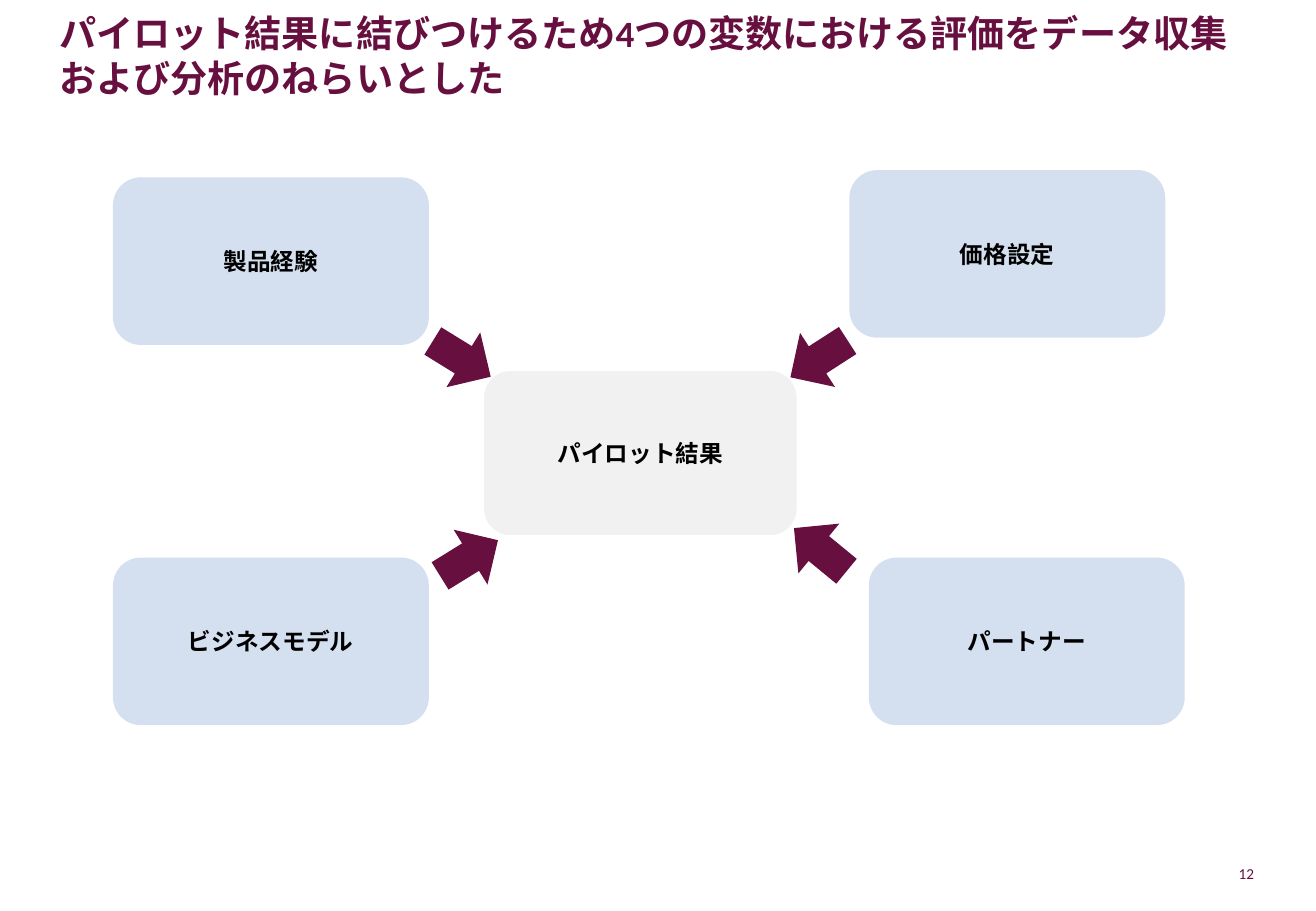
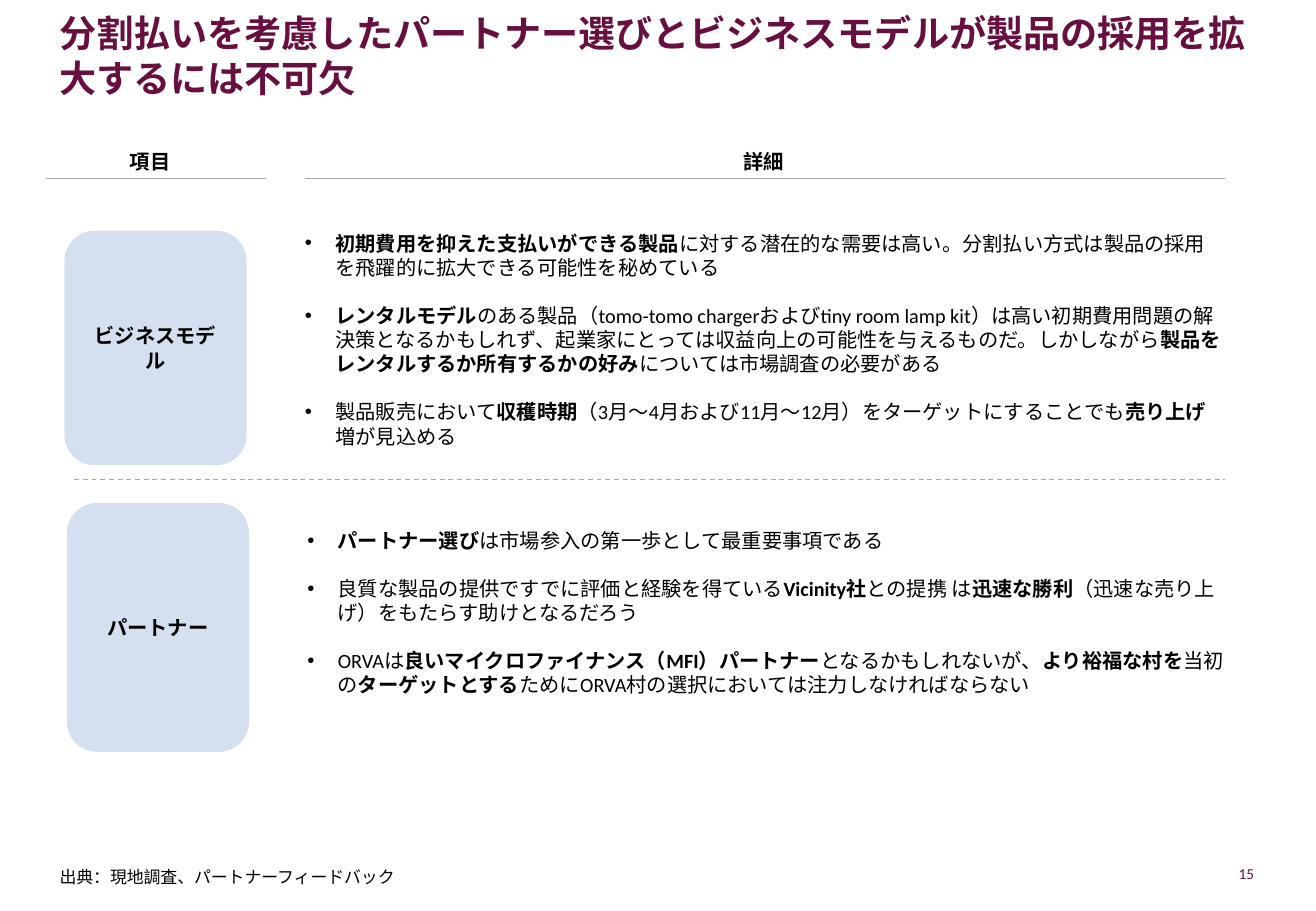
"""Build two slides on pilot variables and product adoption."""
from lxml.etree import SubElement
from pptx import Presentation
from pptx.dml.color import RGBColor
from pptx.enum.dml import MSO_LINE
from pptx.enum.shapes import MSO_CONNECTOR, MSO_SHAPE
from pptx.enum.text import MSO_ANCHOR, PP_ALIGN
from pptx.oxml.ns import qn
from pptx.util import Inches, Pt

COLOURS = {
    "accent": "67103F",
    "card": "D4E0EF",
    "centre": "F1F1F2",
    "rule": "A6A6A6",
    "text": "000000",
    "white": "FFFFFF",
}
FRAME = {"word_wrap": True, "margin_left": 0, "margin_right": 0,
         "margin_top": 0, "margin_bottom": 0}
INDENT = Inches(0.25)
CARD_SIZE = (2.6, 1.38)
ARROW_SIZE = (0.56, 0.53)


def colour(name):
    return RGBColor.from_string(COLOURS[name])


def apply(target, values):
    for name, value in values.items():
        setattr(target, name, value)


class Deck:
    def __init__(self):
        self.presentation = Presentation()
        apply(self.presentation, {"slide_width": Inches(10.83),
                                  "slide_height": Inches(7.5)})
        self.slide = None

    def add_slide(self, title, number):
        layout = self.presentation.slide_layouts[6]
        self.slide = self.presentation.slides.add_slide(layout)
        self.text((9.53, 7.03, 0.79, 0.32), number, 9, "accent",
                  align=PP_ALIGN.RIGHT, anchor=MSO_ANCHOR.MIDDLE)
        self.text((0.49, 0.15, 9.85, 0.67), title, 22, "accent",
                  bold=True, anchor=MSO_ANCHOR.BOTTOM)

    def add_runs(self, paragraph, text, size, colour_name="text", bold=False):
        for index, part in enumerate(text.split("**")):
            if part:
                run = paragraph.add_run()
                run.text = part
                apply(run.font, {"name": "Calibri", "size": Pt(size),
                                 "bold": bold or index % 2 == 1})
                run.font.color.rgb = colour(colour_name)

    def text(self, box, text, size, colour_name="text", bold=False,
             align=PP_ALIGN.LEFT, anchor=MSO_ANCHOR.TOP):
        shape = self.slide.shapes.add_textbox(*map(Inches, box))
        apply(shape.text_frame, {**FRAME, "vertical_anchor": anchor})
        paragraph = shape.text_frame.paragraphs[0]
        paragraph.alignment = align
        self.add_runs(paragraph, text, size, colour_name, bold)

    def bullets(self, box, items):
        shape = self.slide.shapes.add_textbox(*map(Inches, box))
        frame = shape.text_frame
        apply(frame, FRAME)
        for index, item in enumerate(items):
            paragraph = frame.add_paragraph() if index else frame.paragraphs[0]
            properties = paragraph._p.get_or_add_pPr()
            properties.set("marL", str(INDENT))
            properties.set("indent", str(-INDENT))
            SubElement(properties, qn("a:buFont"), typeface="Arial")
            SubElement(properties, qn("a:buChar"), char="•")
            if index:
                paragraph.space_before = Pt(14)
            self.add_runs(paragraph, item, 12)

    def shape(self, kind, box, fill):
        shape = self.slide.shapes.add_shape(kind, *map(Inches, box))
        shape.shadow.inherit = False
        shape.fill.solid()
        shape.fill.fore_color.rgb = colour(fill)
        shape.line.fill.background()
        return shape

    def card(self, box, label, size, fill="card"):
        shape = self.shape(MSO_SHAPE.ROUNDED_RECTANGLE, box, fill)
        apply(shape.text_frame, {"word_wrap": True,
                                 "vertical_anchor": MSO_ANCHOR.MIDDLE})
        paragraph = shape.text_frame.paragraphs[0]
        paragraph.alignment = PP_ALIGN.CENTER
        self.add_runs(paragraph, label, size, bold=True)
        return shape

    def arrow(self, left, top, rotation):
        shape = self.shape(MSO_SHAPE.RIGHT_ARROW, (left, top, *ARROW_SIZE), "accent")
        shape.rotation = rotation

    def rule(self, left, right, top, dash=None):
        connector = self.slide.shapes.add_connector(
            MSO_CONNECTOR.STRAIGHT, *map(Inches, (left, top, right, top)))
        connector.line.color.rgb = colour("rule")
        apply(connector.line, {"width": Pt(0.75), "dash_style": dash})
        SubElement(connector._element.spPr, qn("a:effectLst"))


def add_variables(deck):
    deck.add_slide("パイロット結果に結びつけるため4つの変数における評価をデータ収集および分析のねらいとした", "12")
    for left, top, label in (
        (0.93, 1.46, "製品経験"),
        (6.99, 1.4, "価格設定"),
        (0.93, 4.59, "ビジネスモデル"),
        (7.15, 4.59, "パートナー"),
    ):
        deck.card((left, top, *CARD_SIZE), label, 14)
    result = deck.card((3.97, 3.04, *CARD_SIZE), "パイロット結果", 14, "centre")
    result.line.color.rgb = colour("white")
    result.line.width = Pt(2)
    for left, top, rotation in (
        (3.52, 2.69, 31.7),
        (3.58, 4.33, 328.3),
        (6.46, 2.69, 147.2),
        (6.47, 4.26, 219.4),
    ):
        deck.arrow(left, top, rotation)


def add_findings(deck):
    deck.add_slide("分割払いを考慮したパートナー選びとビジネスモデルが製品の採用を拡大するには不可欠", "15")
    for left, width, heading, start, end in (
        (0.01, 2.45, "項目", 0.38, 2.19),
        (5.01, 2.55, "詳細", 2.51, 10.08),
    ):
        deck.text((left, 1.23, width, 0.24), heading, 12, bold=True,
                  align=PP_ALIGN.CENTER)
        deck.rule(start, end, 1.47)
    deck.rule(0.61, 10.08, 3.95, MSO_LINE.DASH)
    for card, label, details, items in (
        ((0.53, 1.9, 1.5, 1.93), "ビジネスモデル", (2.51, 1.9, 7.57, 1.85), (
            "**初期費用を抑えた支払いができる製品**に対する潜在的な需要は高い。"
            "分割払い方式は製品の採用を飛躍的に拡大できる可能性を秘めている",
            "**レンタルモデル**のある製品（tomo-tomo chargerおよびtiny room lamp kit）は"
            "高い初期費用問題の解決策となるかもしれず、起業家にとっては収益向上の可能性を"
            "与えるものだ。しかしながら**製品をレンタルするか所有するかの好み**については"
            "市場調査の必要がある",
            "製品販売において**収穫時期**（3月～4月および11月～12月）をターゲットに"
            "することでも**売り上げ**増が見込める",
        )),
        ((0.55, 4.14, 1.5, 2.05), "パートナー", (2.53, 4.35, 7.57, 1.76), (
            "**パートナー選び**は市場参入の第一歩として最重要事項である",
            "良質な製品の提供ですでに評価と経験を得ている**Vicinity社**との提携 は"
            "**迅速な勝利**（迅速な売り上げ）をもたらす助けとなるだろう",
            "ORVAは**良いマイクロファイナンス（MFI）パートナー**となるかもしれないが、"
            "**より裕福な村を**当初の**ターゲットとする**ためにORVA村の選択においては"
            "注力しなければならない",
        )),
    ):
        deck.card(card, label, 12)
        deck.bullets(details, items)
    deck.text((0.49, 7.05, 8.92, 0.25), "出典：現地調査、パートナーフィードバック", 10,
              anchor=MSO_ANCHOR.BOTTOM)


def main():
    deck = Deck()
    add_variables(deck)
    add_findings(deck)
    deck.presentation.save("out.pptx")


if __name__ == "__main__":
    main()
